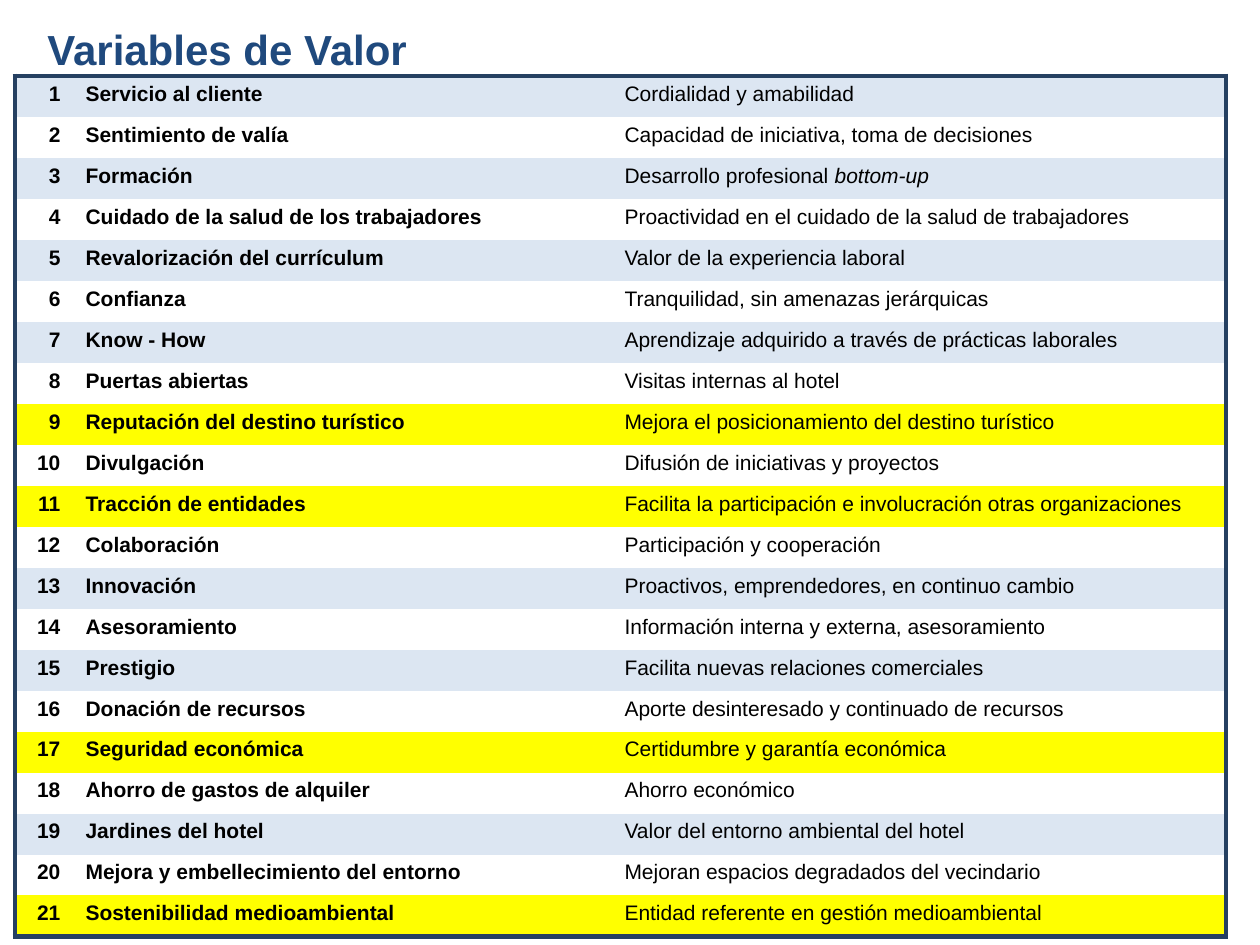
from dataclasses import dataclass

from lxml import etree
from pptx import Presentation
from pptx.dml.color import RGBColor
from pptx.enum.shapes import MSO_SHAPE
from pptx.enum.text import MSO_ANCHOR, PP_ALIGN
from pptx.oxml.ns import qn
from pptx.util import Emu, Pt

RECTANGLE = MSO_SHAPE.RECTANGLE
MIDDLE = MSO_ANCHOR.MIDDLE
LEFT, RIGHT = PP_ALIGN.LEFT, PP_ALIGN.RIGHT

PX_PER_INCH = 126
BLANK_LAYOUT = 6


@dataclass(frozen=True)
class Theme:
    font: str = "Arial"
    title_size: int = 24
    body_size: int = 12
    border_width: int = 3
    title: str = "1F497D"
    text: str = "000000"
    border: str = "254061"
    plain: str = "FFFFFF"
    band: str = "DCE6F2"
    highlight: str = "FFFF00"


THEME = Theme()

TITLE = "Variables de Valor"
VARIABLES = [
    ("Servicio al cliente", "Cordialidad y amabilidad"),
    ("Sentimiento de valía", "Capacidad de iniciativa, toma de decisiones"),
    ("Formación", "Desarrollo profesional bottom-up"),
    ("Cuidado de la salud de los trabajadores",
     "Proactividad en el cuidado de la salud de trabajadores"),
    ("Revalorización del currículum", "Valor de la experiencia laboral"),
    ("Confianza", "Tranquilidad, sin amenazas jerárquicas"),
    ("Know - How", "Aprendizaje adquirido a través de prácticas laborales"),
    ("Puertas abiertas", "Visitas internas al hotel"),
    ("Reputación del destino turístico",
     "Mejora el posicionamiento del destino turístico"),
    ("Divulgación", "Difusión de iniciativas y proyectos"),
    ("Tracción de entidades",
     "Facilita la participación e involucración otras organizaciones"),
    ("Colaboración", "Participación y cooperación"),
    ("Innovación", "Proactivos, emprendedores, en continuo cambio"),
    ("Asesoramiento", "Información interna y externa, asesoramiento"),
    ("Prestigio", "Facilita nuevas relaciones comerciales"),
    ("Donación de recursos", "Aporte desinteresado y continuado de recursos"),
    ("Seguridad económica", "Certidumbre y garantía económica"),
    ("Ahorro de gastos de alquiler", "Ahorro económico"),
    ("Jardines del hotel", "Valor del entorno ambiental del hotel"),
    ("Mejora y embellecimiento del entorno",
     "Mejoran espacios degradados del vecindario"),
    ("Sostenibilidad medioambiental",
     "Entidad referente en gestión medioambiental"),
]
HIGHLIGHTED = {9, 11, 17, 21}
ITALIC_TERM = "bottom-up"


def px(length):
    return Emu(round(length * 914400 / PX_PER_INCH))


def color(hex_code):
    return RGBColor.from_string(hex_code)


def format_run(run, size, hex_code, bold):
    run.font.name = THEME.font
    run.font.size = Pt(size)
    run.font.color.rgb = color(hex_code)
    run.font.bold = bold


def set_borders(cell, outer_sides):
    """Draw the outer sides of a cell and clear the inner ones."""
    properties = cell._tc.get_or_add_tcPr()
    for index, side in enumerate("LRTB"):
        line = etree.Element(qn(f"a:ln{side}"))
        if side in outer_sides:
            line.set("w", str(Pt(THEME.border_width)))
            fill = etree.SubElement(line, qn("a:solidFill"))
            etree.SubElement(fill, qn("a:srgbClr"), val=THEME.border)
        else:
            etree.SubElement(line, qn("a:noFill"))
        properties.insert(index, line)


def row_color(number):
    if number in HIGHLIGHTED:
        return THEME.highlight
    return THEME.band if number % 2 else THEME.plain


def fill_cell(cell, text, bold, align):
    paragraph = cell.text_frame.paragraphs[0]
    before, term, _ = text.partition(ITALIC_TERM)
    paragraph.text = before
    if term:
        term_run = paragraph.add_run()
        term_run.text = term
        term_run.font.italic = True
    paragraph.alignment = align
    for run in paragraph.runs:
        format_run(run, THEME.body_size, THEME.text, bold)


def add_title(slide, left, top, width, height):
    title = slide.shapes.add_shape(
        RECTANGLE, px(left), px(top), px(width), px(height))
    title.shadow.inherit = False
    title.fill.solid()
    title.fill.fore_color.rgb = color(THEME.plain)
    title.line.fill.background()
    title.text_frame.word_wrap = True
    title.text_frame.vertical_anchor = MIDDLE
    title.text_frame.text = TITLE
    paragraph = title.text_frame.paragraphs[0]
    paragraph.alignment = LEFT
    paragraph.line_spacing = 1.2
    format_run(paragraph.runs[0], THEME.title_size, THEME.title, True)


def add_variables_table(slide, left, top, width, height):
    row_count = len(VARIABLES)
    table = slide.shapes.add_table(
        row_count, 3, px(left), px(top), px(width), px(height)).table
    table.first_row = False
    table.horz_banding = False

    # Columns: number, variable, description
    number_width, variable_width = 58, 539
    column_widths = (number_width, variable_width,
                     width - number_width - variable_width)
    for column, column_width in zip(table.columns, column_widths):
        column.width = px(column_width)

    # One row per variable, framed on the outside only
    for number, (variable, description) in enumerate(VARIABLES, start=1):
        row = table.rows[number - 1]
        row.height = px(height / row_count)
        row_sides = "T" * (number == 1) + "B" * (number == row_count)
        contents = ((str(number), True, RIGHT, "L"),
                    (variable, True, LEFT, ""),
                    (description, False, LEFT, "R"))
        for cell, (text, bold, align, side) in zip(row.cells, contents):
            fill_cell(cell, text, bold, align)
            cell.fill.solid()
            cell.fill.fore_color.rgb = color(row_color(number))
            set_borders(cell, row_sides + side)


def main():
    presentation = Presentation()
    presentation.slide_width = px(1260)
    presentation.slide_height = px(945)
    slide = presentation.slides.add_slide(
        presentation.slide_layouts[BLANK_LAYOUT])
    add_title(slide, 35, 8, 694, 71)
    add_variables_table(slide, 15, 76, 1211, 861)
    presentation.save("out.pptx")


if __name__ == "__main__":
    main()
